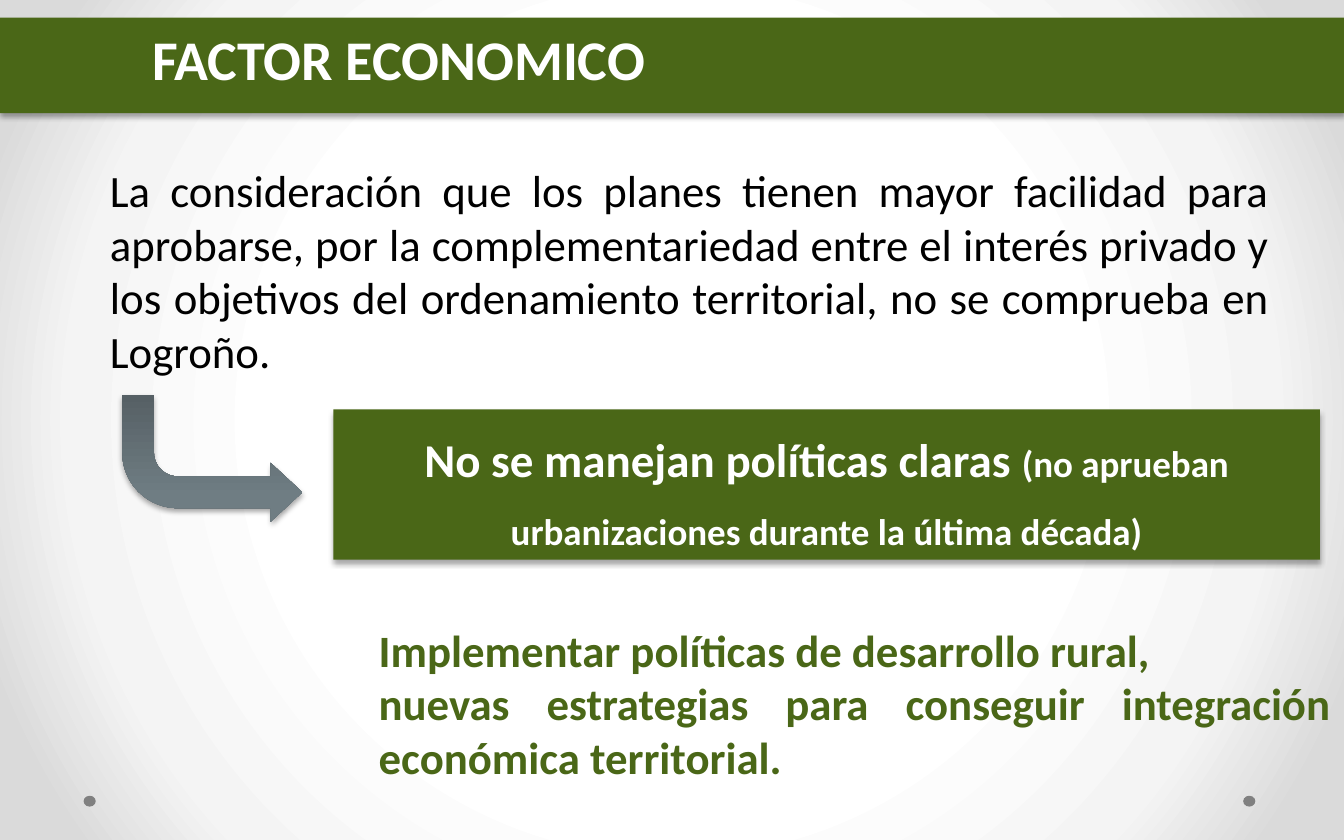
from dataclasses import dataclass

from pptx import Presentation
from pptx.dml.color import RGBColor
from pptx.enum.shapes import MSO_SHAPE
from pptx.enum.text import MSO_ANCHOR, PP_ALIGN
from pptx.oxml import parse_xml
from pptx.oxml.ns import nsdecls, qn
from pptx.util import Pt

GREEN, WHITE, BLACK, GRAY = "4A6717", "FFFFFF", "000000", "808080"
WIDTH, HEIGHT = 720, 450


@dataclass(frozen=True)
class Box:
    left: float
    top: float
    width: float
    height: float

    def place(self) -> tuple:
        return tuple(Pt(v) for v in (self.left, self.top, self.width, self.height))


@dataclass(frozen=True)
class Span:
    text: str
    size: float
    color: str
    bold: bool = True


@dataclass(frozen=True)
class Block:
    box: Box
    lines: list[list[Span]]
    fill: str | None = None
    align: PP_ALIGN = PP_ALIGN.JUSTIFY
    anchor: MSO_ANCHOR = MSO_ANCHOR.TOP
    spacing: float = 1.0
    inset: float = 7.2


def paint(target, color: str) -> None:
    """Give a fill or a font a solid colour from a hex string."""
    if hasattr(target, "solid"):
        target.solid()
        target.fore_color.rgb = RGBColor.from_string(color)
    else:
        target.color.rgb = RGBColor.from_string(color)


def blend(root, fill, stops: list[tuple[int, str]], shade: str) -> None:
    """Set a gradient whose direction is the given shade element."""
    fill.gradient()
    old = root.find(".//" + qn("a:gradFill"))
    marks = "".join(
        f'<a:gs pos="{pos * 1000}"><a:srgbClr val="{color}"/></a:gs>'
        for pos, color in stops
    )
    new = parse_xml(
        f'<a:gradFill {nsdecls("a")} rotWithShape="1">'
        f"<a:gsLst>{marks}</a:gsLst>{shade}</a:gradFill>"
    )
    old.getparent().replace(old, new)


def add_shape(slide, kind: MSO_SHAPE, box: Box):
    shape = slide.shapes.add_shape(kind, *box.place())
    shape.shadow.inherit = False
    shape.line.fill.background()
    return shape


def cast(shape) -> None:
    """Add a soft shadow below the shape."""
    effects = shape.element.spPr.find(qn("a:effectLst"))
    effects.append(parse_xml(
        f'<a:outerShdw {nsdecls("a")} blurRad="{Pt(3.1)}" dist="{Pt(1.8)}" '
        f'dir="5400000" rotWithShape="0"><a:srgbClr val="{BLACK}">'
        '<a:alpha val="35000"/></a:srgbClr></a:outerShdw>'
    ))


def add_block(slide, block: Block) -> None:
    if block.fill:
        shape = add_shape(slide, MSO_SHAPE.RECTANGLE, block.box)
        paint(shape.fill, block.fill)
        cast(shape)
    else:
        shape = slide.shapes.add_textbox(*block.box.place())
    frame = shape.text_frame
    frame.word_wrap = True
    frame.vertical_anchor = block.anchor
    frame.margin_left = Pt(block.inset)
    for index, line in enumerate(block.lines):
        para = frame.add_paragraph() if index else frame.paragraphs[0]
        para.alignment = block.align
        para.line_spacing = block.spacing
        for span in line:
            run = para.add_run()
            run.text = span.text
            font = run.font
            font.name, font.size, font.bold = "Calibri", Pt(span.size), span.bold
            paint(font, span.color)


def add_arrow(slide, box: Box) -> None:
    arrow = add_shape(slide, MSO_SHAPE.BENT_ARROW, box)
    for index, value in enumerate((0.25, 0.232, 0.25, 0.438)):
        arrow.adjustments[index] = value
    arrow.element.spPr.find(qn("a:xfrm")).set("flipV", "1")
    stops = [(0, "566065"), (80, "6F7D83"), (100, "6F7E84")]
    blend(arrow.element, arrow.fill, stops, '<a:lin ang="16200000" scaled="0"/>')
    cast(arrow)


BODY = Block(Box(51.8, 83.5, 635, 113), [[Span(
    "La consideración que los planes tienen mayor facilidad para aprobarse, "
    "por la complementariedad entre el interés privado y los objetivos del "
    "ordenamiento territorial, no se comprueba en Logroño.", 24, BLACK, False)]])

CLAIM = Block(
    Box(178.6, 219.4, 528.5, 80.5),
    [[Span("No se manejan políticas claras ", 25.2, WHITE),
      Span("(no aprueban urbanizaciones durante la última década)", 19.8, WHITE)]],
    fill=GREEN, align=PP_ALIGN.CENTER, anchor=MSO_ANCHOR.BOTTOM, spacing=1.5)

ADVICE = Block(
    Box(195.8, 321.1, 524.2, 111),
    [[Span("Implementar políticas de desarrollo rural,", 24, GREEN)],
     [Span("nuevas estrategias para conseguir integración económica territorial.",
           24, GREEN)]],
    anchor=MSO_ANCHOR.MIDDLE)

BANNER = Block(Box(0, 9.4, WIDTH, 51.2), [[Span("FACTOR ECONOMICO", 30, WHITE)]],
               fill=GREEN, inset=81.5)


def main() -> None:
    deck = Presentation()
    deck.slide_width, deck.slide_height = Pt(WIDTH), Pt(HEIGHT)
    slide = deck.slides.add_slide(deck.slide_layouts[6])
    blend(slide.element, slide.background.fill,
          [(50, WHITE), (76, "F4F4F4"), (92, "DADADA")],
          '<a:path path="circle">'
          '<a:fillToRect l="50000" t="50000" r="50000" b="50000"/></a:path>')
    for left in (666, 44.8):
        dot = add_shape(slide, MSO_SHAPE.OVAL, Box(left, 426.3, 6.5, 5.8))
        paint(dot.fill, GRAY)
    add_block(slide, BODY)
    add_arrow(slide, Box(65.5, 211.5, 96.5, 68))
    for block in (CLAIM, ADVICE, BANNER):
        add_block(slide, block)
    deck.save("out.pptx")


if __name__ == "__main__":
    main()
